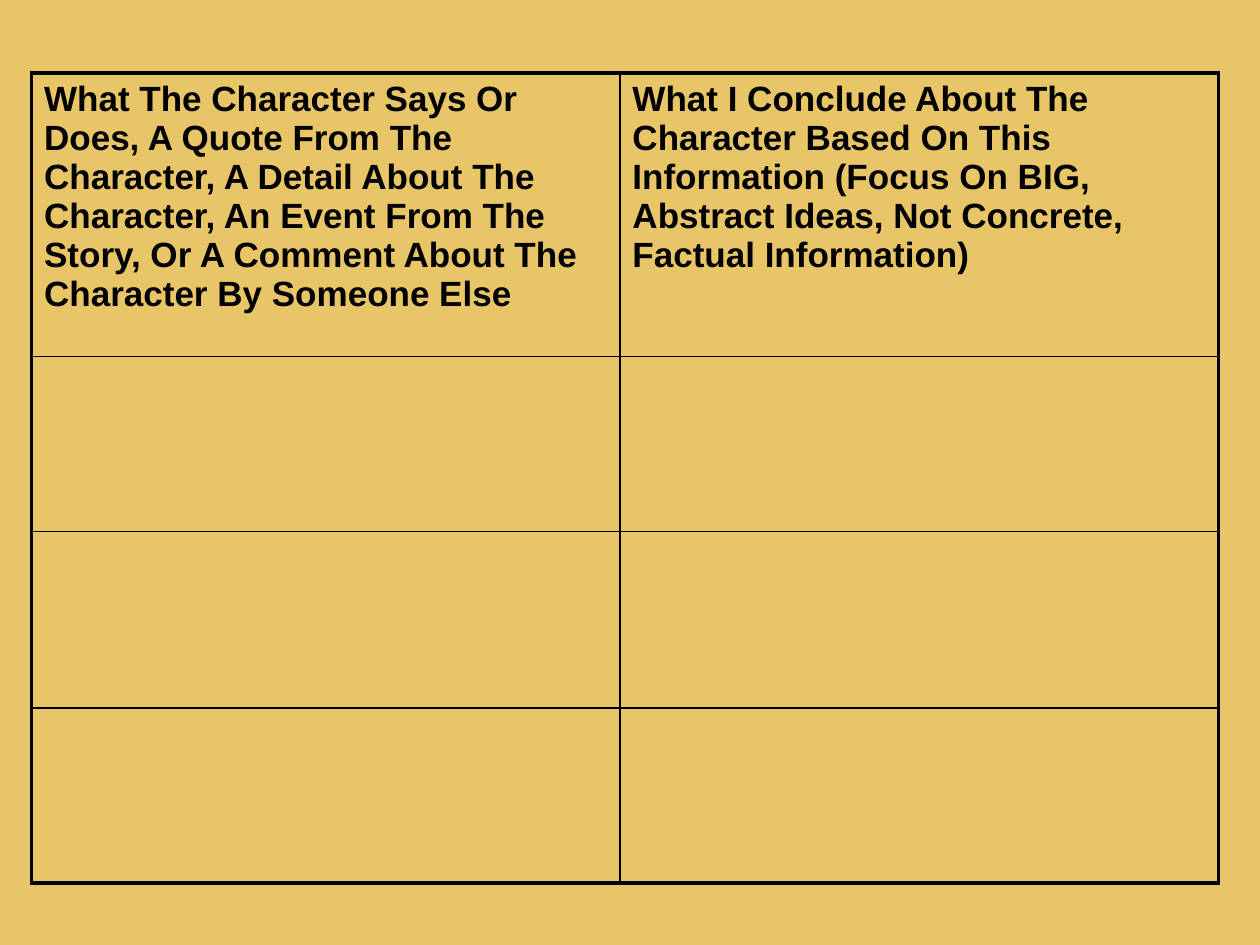
"""Build a two-column character analysis chart with blank rows for notes."""
import pptx
import pptx.dml.color
import pptx.oxml
import pptx.oxml.ns
import pptx.util

INK = "000000"
PAPER = "E8C567"
HEADINGS = [
    "What The Character Says Or Does, A Quote From The Character, "
    "A Detail About The Character, An Event From The Story, "
    "Or A Comment About The Character By Someone Else",
    "What I Conclude About The Character Based On This Information "
    "(Focus On BIG, Abstract Ideas, Not Concrete, Factual Information)",
]
COLUMN_WIDTHS = [4.67, 4.75]
ROW_HEIGHTS = [2.25, 1.39, 1.4, 1.39]
THIN, THICK = 1, 2.25


def rgb(value):
    return pptx.dml.color.RGBColor.from_string(value)


def set_borders(cell, widths):
    properties = cell._tc.get_or_add_tcPr()
    for position, (side, width) in enumerate(widths.items()):
        line = pptx.oxml.parse_xml(
            f'<a:ln{side} {pptx.oxml.ns.nsdecls("a")} w="{pptx.util.Pt(width)}">'
            f'<a:solidFill><a:srgbClr val="{INK}"/></a:solidFill></a:ln{side}>'
        )
        properties.insert(position, line)


presentation = pptx.Presentation()
presentation.slide_width = pptx.util.Inches(10)
presentation.slide_height = pptx.util.Inches(7.5)
slide = presentation.slides.add_slide(presentation.slide_layouts[6])
slide.background.fill.solid()
slide.background.fill.fore_color.rgb = rgb(PAPER)

table = slide.shapes.add_table(
    len(ROW_HEIGHTS), len(COLUMN_WIDTHS),
    pptx.util.Inches(0.25), pptx.util.Inches(0.58),
    pptx.util.Inches(sum(COLUMN_WIDTHS)), pptx.util.Inches(sum(ROW_HEIGHTS)),
).table
table.first_row = False
table.horz_banding = False
for column, width in zip(table.columns, COLUMN_WIDTHS):
    column.width = pptx.util.Inches(width)
for row, height in zip(table.rows, ROW_HEIGHTS):
    row.height = pptx.util.Inches(height)

last_row, last_column = len(ROW_HEIGHTS) - 1, len(COLUMN_WIDTHS) - 1
for row_index in range(len(ROW_HEIGHTS)):
    for column_index in range(len(COLUMN_WIDTHS)):
        cell = table.cell(row_index, column_index)
        cell.fill.background()
        set_borders(cell, {
            "L": THICK if column_index == 0 else THIN,
            "R": THICK if column_index == last_column else THIN,
            "T": THICK if row_index == 0 else THIN,
            "B": THICK if row_index == last_row else THIN,
        })

for column_index, heading in enumerate(HEADINGS):
    paragraph = table.cell(0, column_index).text_frame.paragraphs[0]
    run = paragraph.add_run()
    run.text = heading
    run.font.name = "Arial"
    run.font.size = pptx.util.Pt(20)
    run.font.bold = True
    run.font.color.rgb = rgb(INK)

presentation.save("out.pptx")
